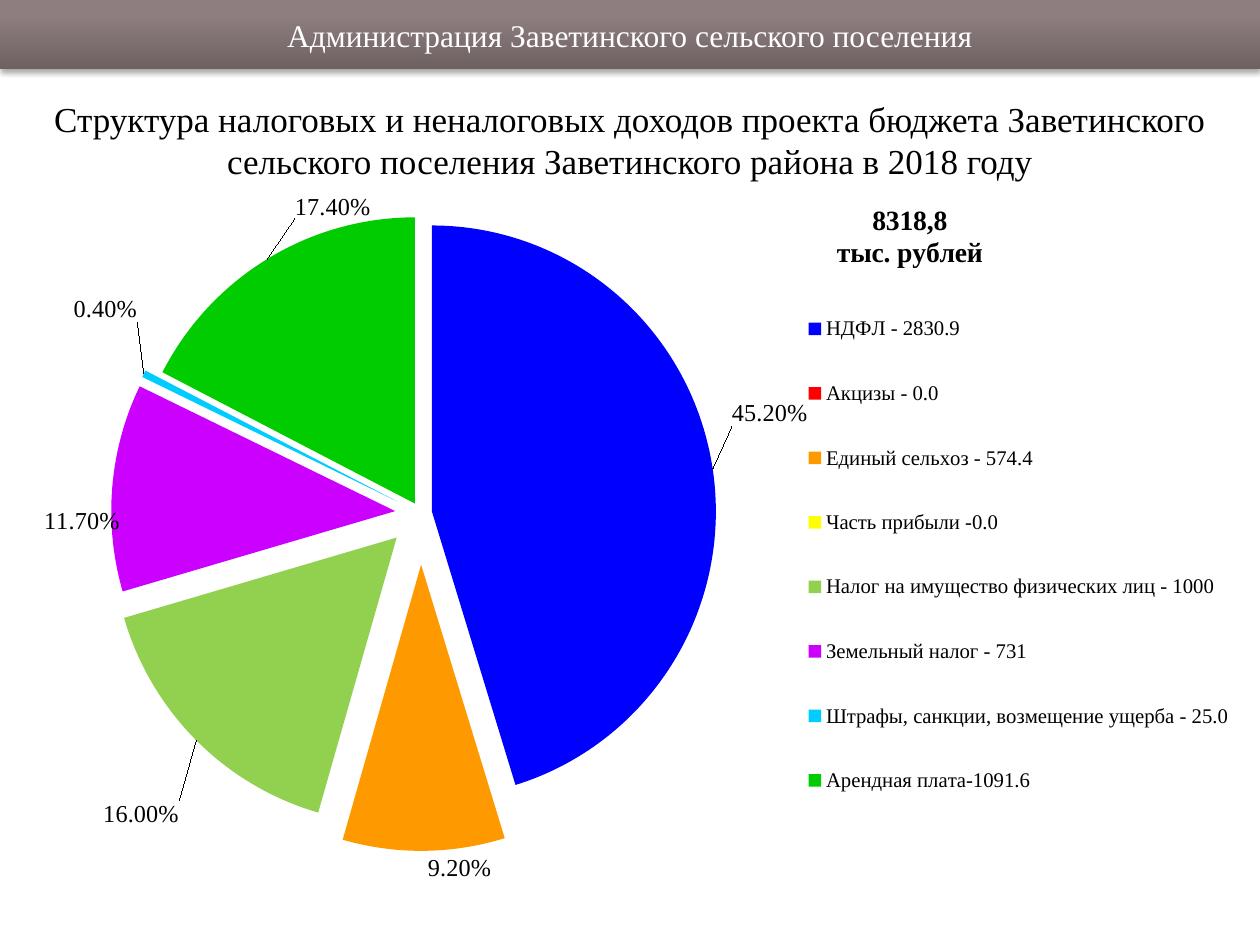
from dataclasses import dataclass

from pptx import Presentation
from pptx.chart.data import CategoryChartData
from pptx.dml.color import RGBColor
from pptx.enum.chart import XL_CHART_TYPE, XL_LABEL_POSITION as LABEL_POS, XL_LEGEND_POSITION as LEGEND_POS
from pptx.enum.shapes import MSO_SHAPE
from pptx.enum.text import MSO_ANCHOR, PP_ALIGN
from pptx.oxml import parse_xml
from pptx.oxml.ns import nsdecls
from pptx.util import Inches, Pt


@dataclass(frozen=True)
class Theme:
    """Colours, fonts and type sizes of the slide."""
    font: str = "Times New Roman"
    chart_font: str = "Calibri"
    black: str = "000000"
    white: str = "FFFFFF"
    header_stops: tuple = ((0, "6E6162"), (80, "8E7E7F"), (100, "8F7E80"))
    title: int = 20
    header: int = 18
    total: int = 16
    label: int = 14
    legend: int = 12


THEME = Theme()
PERCENT = "0.00%"

# name, share, colour, explosion %, label offset
INCOME = [
    ("НДФЛ - 2830.9", 0.452, "0000FF", 4, (0.01, -0.06)),
    ("Акцизы - 0.0", 0, "FF0000", 0, None),
    ("Единый сельхоз - 574.4", 0.092, "FF9900", 18, (0.03, 0)),
    ("Часть прибыли -0.0", 0, "FFFF00", 0, None),
    ("Налог на имущество физических лиц - 1000", 0.16, "92D050", 12, (-0.01, 0.08)),
    ("Земельный налог - 731", 0.117, "CC00FF", 9, (0.01, 0.05)),
    ("Штрафы, санкции, возмещение ущерба - 25.0", 0.004, "00CCFF", 9, (0, -0.07)),
    ("Арендная плата-1091.6", 0.174, "00CC00", 4, (0.09, -0.05)),
]


def style(font, size, color=THEME.black, bold=False, name=THEME.font):
    """Set the typeface, size, colour and weight of a font."""
    font.name, font.size, font.bold = name, Pt(size), bold
    font.color.rgb = RGBColor.from_string(color)


def write(sp, text, size, color):
    """Write one centred paragraph into a shape."""
    tf = sp.text_frame
    tf.word_wrap = True
    tf.vertical_anchor = MSO_ANCHOR.MIDDLE
    p = tf.paragraphs[0]
    p.text, p.alignment = text, PP_ALIGN.CENTER
    style(p.font, size, color)


def add_header(slide, box):
    """Add the gradient band with the name of the administration."""
    sp = slide.shapes.add_shape(MSO_SHAPE.RECTANGLE, *box)
    sp.line.fill.background()
    stops = "".join(f'<a:gs pos="{pos * 1000}"><a:srgbClr val="{color}"/></a:gs>'
                    for pos, color in THEME.header_stops)
    ln = sp.element.spPr.find("{*}ln")
    ln.addprevious(parse_xml(
        f'<a:gradFill {nsdecls("a")} rotWithShape="1"><a:gsLst>{stops}</a:gsLst>'
        '<a:lin ang="16200000" scaled="0"/></a:gradFill>'))
    ln.addnext(parse_xml(
        f'<a:effectLst {nsdecls("a")}><a:outerShdw blurRad="{Pt(3.1)}" dist="{Pt(1.8)}" '
        f'dir="5400000" rotWithShape="0"><a:srgbClr val="{THEME.black}">'
        '<a:alpha val="35000"/></a:srgbClr></a:outerShdw></a:effectLst>'))
    write(sp, "Администрация Заветинского сельского поселения", THEME.header, THEME.white)


def add_title(slide, box):
    """Add the slide heading."""
    write(slide.shapes.add_textbox(*box),
          "Структура налоговых и неналоговых доходов проекта бюджета Заветинского "
          "сельского поселения Заветинского района в 2018 году", THEME.title, THEME.black)


def set_layout(parent, index, x, y, w=None, h=None, inner=False, edge=True):
    """Give a chart part a manual layout as child number index."""
    for old in parent.xpath("c:layout"):
        parent.remove(old)
    items = [("layoutTarget", "inner")] if inner else []
    items += [("xMode", "edge"), ("yMode", "edge")] if edge else []
    items += [(tag, value) for tag, value in zip("xywh", (x, y, w, h)) if value is not None]
    xml = "".join(f'<c:{tag} val="{value}"/>' for tag, value in items)
    parent.insert(index, parse_xml(
        f'<c:layout {nsdecls("c")}><c:manualLayout>{xml}</c:manualLayout></c:layout>'))


def style_slices(series):
    """Colour and explode the slices and place their labels."""
    labels = series.data_labels
    labels.show_value = True
    labels.number_format, labels.number_format_is_linked = PERCENT, False
    labels.position = LABEL_POS.BEST_FIT
    style(labels.font, THEME.label)
    ser = series._element
    for i, (_, _, color, explosion, offset) in enumerate(INCOME):
        point = series.points[i]
        fill = point.format.fill
        fill.solid()
        fill.fore_color.rgb = RGBColor.from_string(color)
        if offset is None:
            continue
        ser.xpath(f"c:dPt[c:idx/@val='{i}']/c:spPr")[0].addprevious(
            parse_xml(f'<c:explosion {nsdecls("c")} val="{explosion}"/>'))
        style(point.data_label.font, THEME.label)
        point.data_label.position = LABEL_POS.BEST_FIT
        label = ser.xpath(f"c:dLbls/c:dLbl[c:idx/@val='{i}']")[0]
        set_layout(label, 1, *offset, edge=False)
        label.insert(2, parse_xml(
            f'<c:numFmt {nsdecls("c")} formatCode="{PERCENT}" sourceLinked="0"/>'))


def add_income_chart(slide, box):
    """Add the pie of income shares with its total and legend."""
    data = CategoryChartData(number_format=PERCENT)
    data.categories = [row[0] for row in INCOME]
    data.add_series("Series 1", [row[1] for row in INCOME])
    chart = slide.shapes.add_chart(XL_CHART_TYPE.PIE, *box, data).chart
    style(chart.font, THEME.header, name=THEME.chart_font)

    tf = chart.chart_title.text_frame
    tf.text = "8318,8\nтыс. рублей"
    for p in tf.paragraphs:
        style(p.font, THEME.total, bold=True)
    chart.chart_title.include_in_layout = False

    chart.has_legend = True
    legend = chart.legend
    legend.position, legend.include_in_layout = LEGEND_POS.RIGHT, False
    style(legend.font, THEME.legend)

    plot = chart.plots[0]
    plot.vary_by_categories = True
    style_slices(plot.series[0])

    root = chart._chartSpace
    set_layout(root.xpath("c:chart/c:title")[0], 1, 0.66, 0.01)
    set_layout(root.xpath("c:chart/c:legend")[0], 1, 0.63, 0.12, 0.37, 0.81)
    set_layout(root.xpath("c:chart/c:plotArea")[0], 0, 0.01, 0.05, 0.61, 0.83, inner=True)


def main():
    """Build the slide and save it."""
    prs = Presentation()
    prs.slide_width, prs.slide_height = Inches(10), Inches(7.5)
    slide = prs.slides.add_slide(prs.slide_layouts[6])
    add_title(slide, [Inches(v) for v in (0, 0.7, 10, 0.81)])
    add_header(slide, [Inches(v) for v in (0, 0, 10, 0.55)])
    add_income_chart(slide, [Inches(v) for v in (0.23, 1.53, 9.61, 5.5)])
    prs.save("out.pptx")


if __name__ == "__main__":
    main()
